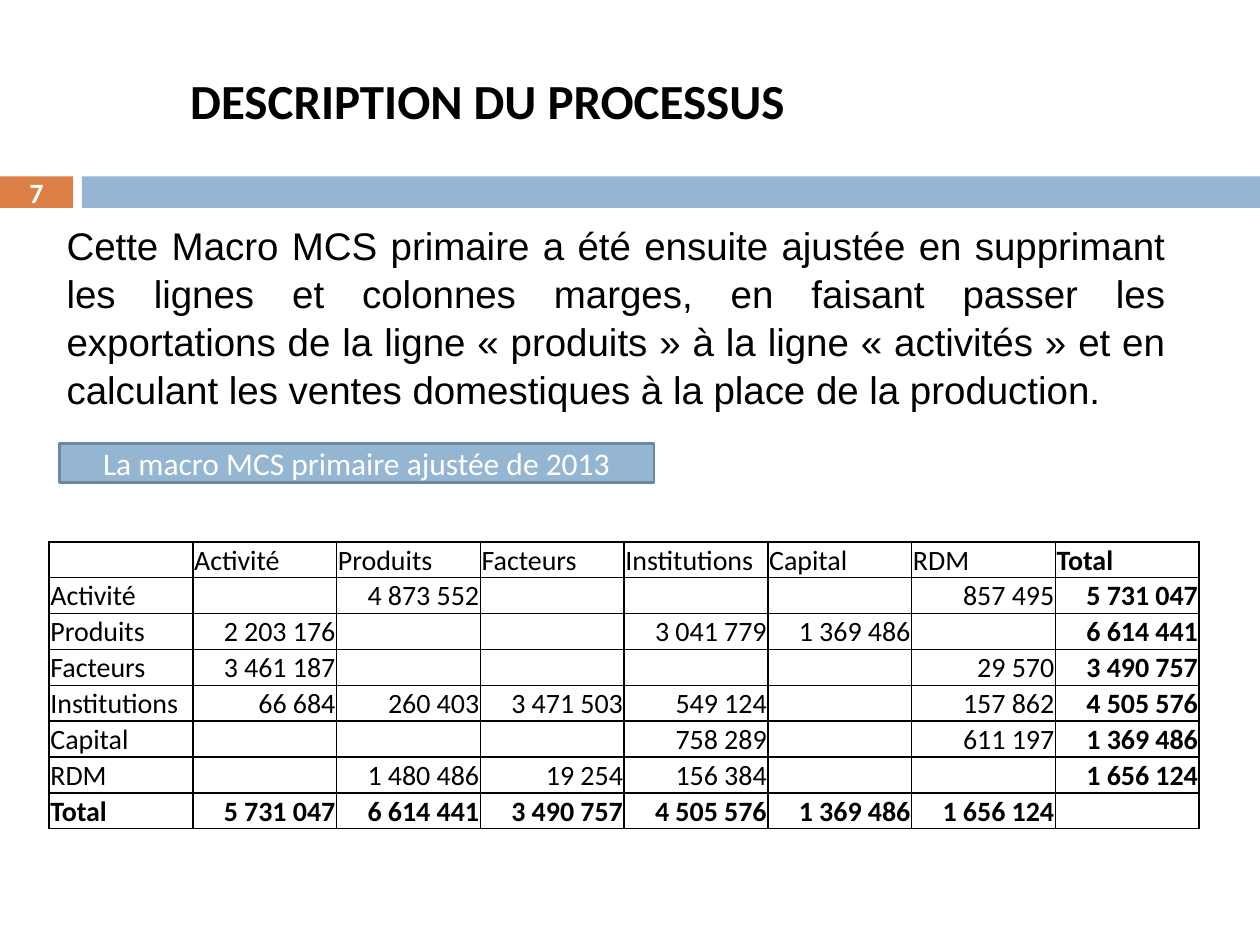
import pptx
import pptx.util
import pptx.dml.color
import pptx.enum.shapes
import pptx.enum.text
import pptx.oxml
import pptx.oxml.ns

Inches, Pt = pptx.util.Inches, pptx.util.Pt
ALIGN = pptx.enum.text.PP_ALIGN
ANCHOR = pptx.enum.text.MSO_ANCHOR
COLORS = {"black": "000000", "white": "FFFFFF", "orange": "DD8047",
          "blue": "94B6D2", "edge": "6D879B"}


def rgb(name):
    return pptx.dml.color.RGBColor.from_string(COLORS[name])


def write(frame, text, size=16, font="Calibri", color="black", bold=False,
          align=ALIGN.LEFT, anchor=ANCHOR.MIDDLE, spacing=None):
    frame.word_wrap = True
    frame.vertical_anchor = anchor
    para = frame.paragraphs[0]
    para.alignment = align
    para.line_spacing = spacing
    span = para.add_run()
    span.text = text
    span.font.size = Pt(size)
    span.font.name = font
    span.font.bold = bold
    span.font.color.rgb = rgb(color)


deck = pptx.Presentation()
deck.slide_width, deck.slide_height = Inches(10), Inches(7.5)
page = deck.slides.add_slide(deck.slide_layouts[5])

# Title
title = page.shapes.title
title.left, title.top = Inches(1.41), Inches(0.25)
title.width, title.height = Inches(8.18), Inches(1.08)
write(title.text_frame, "DESCRIPTION DU PROCESSUS", size=28, bold=True)

# Page number, header band and table caption
bars = [
    (0, 1.4, 0.58, 0.25, "orange", None, "7", 16, True),
    (0.65, 1.4, 9.35, 0.25, "blue", None, "", 16, False),
    (0.47, 3.52, 4.72, 0.31, "blue", "edge",
     "La macro MCS primaire ajustée de 2013", 18, False),
]
for left, top, width, height, fill, edge, text, size, bold in bars:
    bar = page.shapes.add_shape(
        pptx.enum.shapes.MSO_SHAPE.RECTANGLE,
        Inches(left), Inches(top), Inches(width), Inches(height))
    bar.shadow.inherit = False
    bar.fill.solid()
    bar.fill.fore_color.rgb = rgb(fill)
    if edge:
        bar.line.color.rgb = rgb(edge)
        bar.line.width = Pt(1.5)
    else:
        bar.line.fill.background()
    if text:
        bar.text_frame.margin_top = bar.text_frame.margin_bottom = 0
        write(bar.text_frame, text, size=size, color="white", bold=bold,
              align=ALIGN.CENTER)

# Explanation
body = page.shapes.add_textbox(Inches(0.43), Inches(1.7), Inches(8.92), Inches(1.6))
write(body.text_frame,
      "Cette Macro MCS primaire a été ensuite ajustée en supprimant les lignes "
      "et colonnes marges, en faisant passer les exportations de la ligne "
      "« produits » à la ligne « activités » et en calculant les ventes "
      "domestiques à la place de la production.",
      size=22, font="Arial", align=ALIGN.JUSTIFY, anchor=ANCHOR.TOP, spacing=1.04)

# Social accounting matrix
accounts = ["Activité", "Produits", "Facteurs", "Institutions", "Capital", "RDM", "Total"]
flows = [
    ["", "4 873 552", "", "", "", "857 495", "5 731 047"],
    ["2 203 176", "", "", "3 041 779", "1 369 486", "", "6 614 441"],
    ["3 461 187", "", "", "", "", "29 570", "3 490 757"],
    ["66 684", "260 403", "3 471 503", "549 124", "", "157 862", "4 505 576"],
    ["", "", "", "758 289", "", "611 197", "1 369 486"],
    ["", "1 480 486", "19 254", "156 384", "", "", "1 656 124"],
    ["5 731 047", "6 614 441", "3 490 757", "4 505 576", "1 369 486", "1 656 124", ""],
]
rows = [[""] + accounts] + [[name] + line for name, line in zip(accounts, flows)]
count = len(rows)
last = count - 1
matrix = page.shapes.add_table(count, count, Inches(0.39), Inches(4.3),
                               Inches(9.13), Inches(2.28)).table
matrix.first_row = matrix.horz_banding = False

for r, row in enumerate(rows):
    for c, text in enumerate(row):
        cell = matrix.cell(r, c)
        cell.fill.background()
        cell.margin_left = cell.margin_right = cell.margin_top = Inches(0.01)
        cell.margin_bottom = 0
        cell.vertical_anchor = ANCHOR.BOTTOM
        if text:
            write(cell.text_frame, text, bold=last in (r, c), anchor=ANCHOR.BOTTOM,
                  align=ALIGN.RIGHT if r and c else ALIGN.LEFT)
        else:
            # Keeps an empty cell from stretching its row
            cell.text_frame.paragraphs[0]._p.get_or_add_endParaRPr().set("sz", "1600")
        properties = cell._tc.get_or_add_tcPr()
        for place, side in enumerate(("lnL", "lnR", "lnT", "lnB")):
            properties.insert(place, pptx.oxml.parse_xml(
                f'<a:{side} {pptx.oxml.ns.nsdecls("a")} w="{Pt(1)}"><a:solidFill>'
                f'<a:srgbClr val="{COLORS["black"]}"/></a:solidFill></a:{side}>'))

deck.save("out.pptx")
